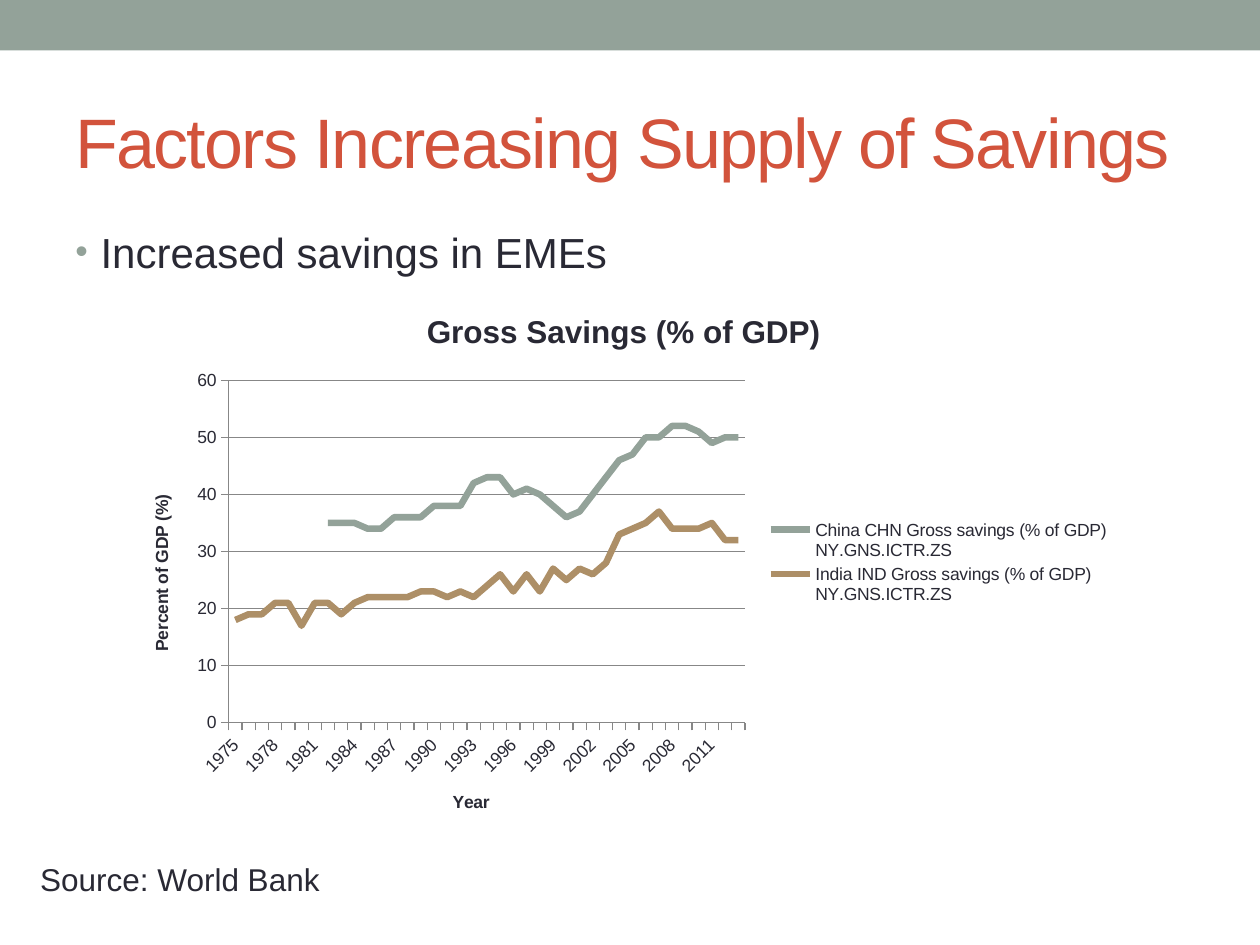
from lxml.etree import SubElement
from pptx import Presentation
from pptx.chart.data import CategoryChartData
from pptx.dml.color import RGBColor
from pptx.enum.chart import XL_CHART_TYPE as ChartType
from pptx.enum.chart import XL_LEGEND_POSITION as LegendPosition
from pptx.enum.chart import XL_TICK_MARK as TickMark
from pptx.enum.shapes import MSO_SHAPE as Shape
from pptx.enum.text import MSO_ANCHOR as Anchor
from pptx.enum.text import PP_ALIGN as Align
from pptx.oxml.ns import qn
from pptx.util import Inches, Pt

WIDTH, HEIGHT = 10, 7.5
FONT = "Arial"
INK, SAGE, TAN, RUST, GRID = "292934", "93A299", "AD8F67", "D2533C", "878787"

YEARS = range(1975, 2014)
CHINA = [None] * 7 + [
    35, 35, 35, 34, 34, 36, 36, 36, 38, 38, 38, 42, 43, 43, 40, 41,
    40, 38, 36, 37, 40, 43, 46, 47, 50, 50, 52, 52, 51, 49, 50, 50]
INDIA = [
    18, 19, 19, 21, 21, 17, 21, 21, 19, 21, 22, 22, 22, 22, 23, 23, 22, 23, 22, 24,
    26, 23, 26, 23, 27, 25, 27, 26, 28, 33, 34, 35, 37, 34, 34, 34, 35, 32, 32]
COUNTRIES = [("China CHN", CHINA, SAGE), ("India IND", INDIA, TAN)]
INDICATOR = "Gross savings (% of GDP) NY.GNS.ICTR.ZS"


def color(hex_string):
    return RGBColor.from_string(hex_string)


def box(left, top, width, height):
    """Turn shares of the slide's size into lengths."""
    return (Inches(left * WIDTH), Inches(top * HEIGHT),
            Inches(width * WIDTH), Inches(height * HEIGHT))


def style_font(font, size, ink=INK, bold=False):
    font.name, font.size, font.bold = FONT, Pt(size), bold
    font.color.rgb = color(ink)


def write(frame, text, size, ink=INK, bold=False, align=Align.LEFT,
          anchor=Anchor.TOP, wrap=True, spacing=None):
    frame.word_wrap = wrap
    frame.vertical_anchor = anchor
    paragraph = frame.paragraphs[0]
    paragraph.alignment = align
    run = paragraph.add_run()
    run.text = text
    style_font(run.font, size, ink, bold)
    if spacing is not None:
        run.font._element.set("spc", str(int(spacing * 100)))
    return paragraph


def add_band(slide):
    band = slide.shapes.add_shape(Shape.RECTANGLE, *box(0, 0, 1, 0.4 / HEIGHT))
    band.shadow.inherit = False
    band.fill.solid()
    band.fill.fore_color.rgb = color(SAGE)
    band.line.fill.background()


def add_title(slide, text):
    title = slide.shapes.title
    title.left, title.top, title.width, title.height = box(0.05, 0.077, 0.9, 0.144)
    write(title.text_frame, text, 40, RUST, anchor=Anchor.MIDDLE, spacing=-1)


def add_text(slide, area, text, size, **options):
    text_box = slide.shapes.add_textbox(*box(*area))
    return write(text_box.text_frame, text, size, **options)


def add_bullet(paragraph):
    properties = paragraph._p.get_or_add_pPr()
    indent = Inches(0.2)
    properties.set("marL", str(indent))
    properties.set("indent", str(-indent))
    before = SubElement(properties, qn("a:spcBef"))
    SubElement(before, qn("a:spcPct")).set("val", "20000")
    bullet_color = SubElement(properties, qn("a:buClr"))
    SubElement(bullet_color, qn("a:srgbClr")).set("val", SAGE)
    SubElement(properties, qn("a:buSzPct")).set("val", "85000")
    SubElement(properties, qn("a:buFont")).set("typeface", FONT)
    SubElement(properties, qn("a:buChar")).set("char", "•")


def style_axis(axis, title):
    write(axis.axis_title.text_frame, title, 10, bold=True, align=None)
    axis.major_tick_mark = TickMark.OUTSIDE
    axis.minor_tick_mark = TickMark.NONE
    axis.format.line.color.rgb = color(GRID)
    style_font(axis.tick_labels.font, 10)


def add_savings_chart(slide, area):
    savings = CategoryChartData()
    savings.categories = [str(year) for year in YEARS]
    for country, values, _ in COUNTRIES:
        savings.add_series(f"{country} {INDICATOR}", values)
    chart = slide.shapes.add_chart(ChartType.LINE, *box(*area), savings).chart
    style_font(chart.font, 10)
    write(chart.chart_title.text_frame, "Gross Savings (% of GDP)", 18,
          bold=True, align=None)

    # Axes and gridlines
    style_axis(chart.category_axis, "Year")
    style_axis(chart.value_axis, "Percent of GDP (%)")
    chart.value_axis.minimum_scale, chart.value_axis.maximum_scale = 0, 60
    chart.value_axis.major_unit = 10
    chart.value_axis.major_gridlines.format.line.color.rgb = color(GRID)

    # Legend
    chart.has_legend = True
    chart.legend.position = LegendPosition.RIGHT
    chart.legend.include_in_layout = False
    style_font(chart.legend.font, 10)

    # Country lines
    plot = chart.plots[0]
    plot.vary_by_categories = False
    for series, (_, _, ink) in zip(plot.series, COUNTRIES):
        series.smooth = False
        series.format.line.width = Pt(3.75)
        series.format.line.color.rgb = color(ink)


def main():
    deck = Presentation()
    deck.slide_width, deck.slide_height = Inches(WIDTH), Inches(HEIGHT)
    slide = deck.slides.add_slide(deck.slide_layouts[5])

    # Heading
    add_band(slide)
    add_title(slide, "Factors Increasing Supply of Savings")

    # Body
    add_bullet(add_text(slide, (0.05, 0.233, 0.9, 0.71),
                        "Increased savings in EMEs", 24))
    add_savings_chart(slide, (0.099, 0.304, 0.792, 0.583))

    # Source line
    add_text(slide, (0.022, 0.904, 0.282, 0.053), "Source: World Bank", 18)

    deck.save("out.pptx")


if __name__ == "__main__":
    main()
